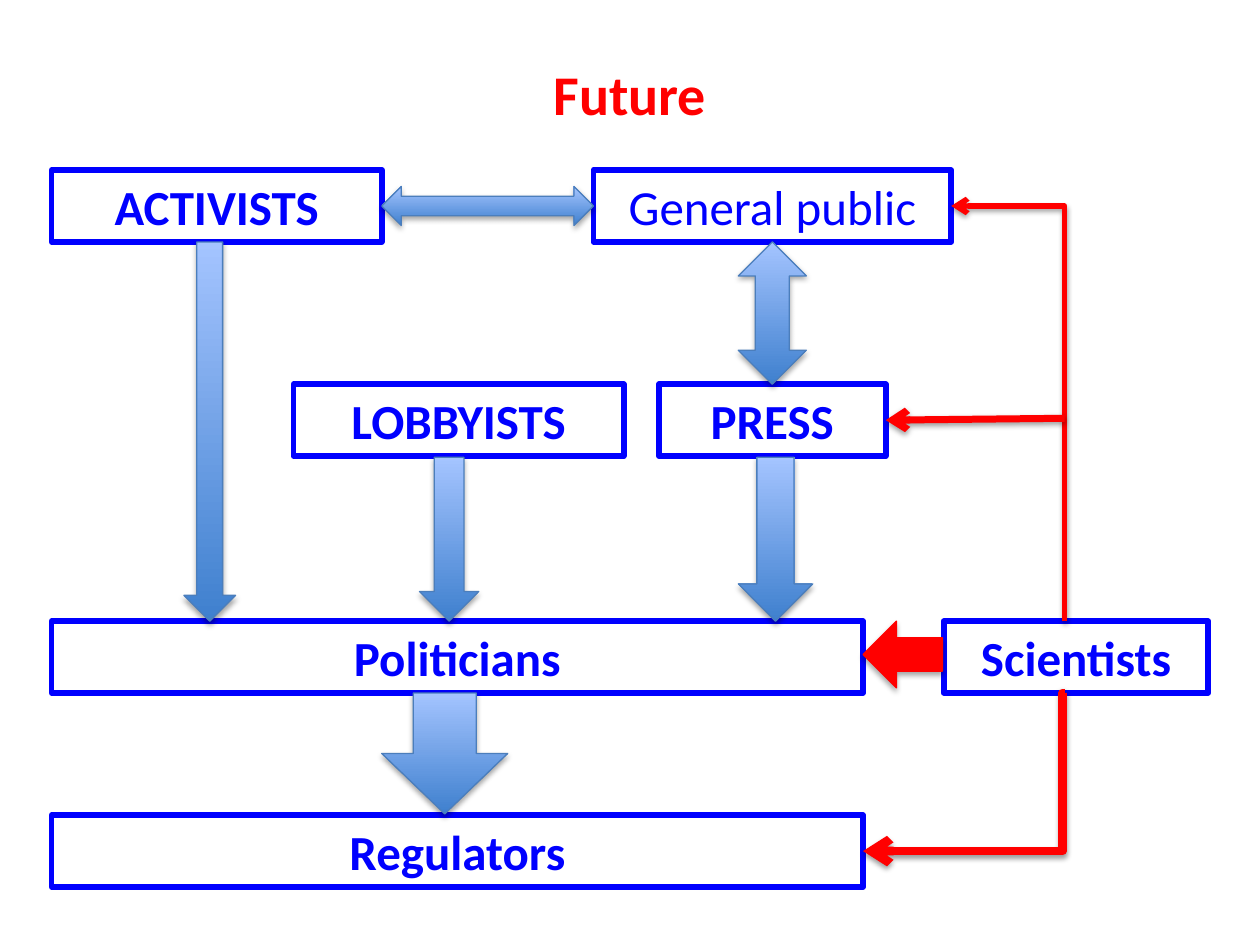
"""Build the "Future" slide: a flow of influence from scientists and others to regulators."""
import pptx
import pptx.dml.color
import pptx.enum.shapes
import pptx.enum.text
import pptx.oxml
import pptx.oxml.ns
import pptx.util

PX = 9144
BLUE = pptx.dml.color.RGBColor(0x00, 0x00, 0xFF)
RED = pptx.dml.color.RGBColor(0xFF, 0x00, 0x00)
ARROW_DARK = pptx.dml.color.RGBColor(0x3F, 0x80, 0xCE)
ARROW_LIGHT = pptx.dml.color.RGBColor(0xA4, 0xC4, 0xFF)
ARROW_EDGE = pptx.dml.color.RGBColor(0x4B, 0x7E, 0xBC)
KIND = pptx.enum.shapes.MSO_SHAPE
LINE = pptx.enum.shapes.MSO_CONNECTOR
NS = pptx.oxml.ns.nsdecls("a")


def add_label(shapes, text, box, size, color, bold):
    shape = shapes.add_textbox(*[value * PX for value in box])
    frame = shape.text_frame
    frame.word_wrap = True
    frame.auto_size = pptx.enum.text.MSO_AUTO_SIZE.SHAPE_TO_FIT_TEXT
    paragraph = frame.paragraphs[0]
    paragraph.alignment = pptx.enum.text.PP_ALIGN.CENTER
    run = paragraph.add_run()
    run.text = text
    run.font.name = "Calibri"
    run.font.size = pptx.util.Pt(size)
    run.font.bold = bold
    run.font.color.rgb = color
    return shape


def add_shadow(shape, distance, opacity):
    shape.element.spPr.append(pptx.oxml.parse_xml(
        f'<a:effectLst {NS}><a:outerShdw blurRad="40000" dist="{distance}" dir="5400000" '
        f'rotWithShape="0"><a:srgbClr val="000000"><a:alpha val="{opacity}"/></a:srgbClr>'
        '</a:outerShdw></a:effectLst>'))


presentation = pptx.Presentation()
presentation.slide_width = 1000 * PX
presentation.slide_height = 750 * PX
slide = presentation.slides.add_slide(presentation.slide_layouts[6])
shapes = slide.shapes

boxes = {}
for name, left, top, width in [
    ("Regulators", 41, 647, 644),
    ("Scientists", 749, 493, 210),
    ("Politicians", 41, 493, 644),
    ("LOBBYISTS", 233, 305, 262),
    ("ACTIVISTS", 41, 135, 262),
    ("General public", 471, 135, 284),
    ("PRESS", 523, 305, 180),
]:
    box = add_label(shapes, name, (left, top, width, 57), 28, BLUE, name != "General public")
    box.line.color.rgb = BLUE
    box.line.width = pptx.util.Pt(3.25)
    boxes[name] = box

for kind, left, top, width, height in [
    (KIND.LEFT_RIGHT_ARROW, 303, 148, 168, 31),
    (KIND.DOWN_ARROW, 333, 363, 47, 130),
    (KIND.DOWN_ARROW, 146, 192, 41, 301),
    (KIND.UP_DOWN_ARROW, 586, 192, 54, 113),
    (KIND.DOWN_ARROW, 586, 363, 59, 130),
    (KIND.DOWN_ARROW, 303, 550, 100, 96),
    (KIND.LEFT_ARROW, 685, 493, 63, 53),
]:
    arrow = shapes.add_shape(kind, left * PX, top * PX, width * PX, height * PX)
    if kind == KIND.LEFT_ARROW:
        arrow.fill.solid()
        arrow.fill.fore_color.rgb = RED
        arrow.line.color.rgb = RED
    else:
        arrow.fill.gradient()
        arrow.fill.gradient_angle = 90
        for stop, color in zip(arrow.fill.gradient_stops, (ARROW_DARK, ARROW_LIGHT)):
            stop.color.rgb = color
        arrow.line.color.rgb = ARROW_EDGE
    arrow.line.width = pptx.util.Pt(0.75)
    add_shadow(arrow, 23000, 35000)

for kind, start_y, target, end_x, end_y, weight, bend in [
    (LINE.ELBOW, 550, "Regulators", 685, 675, 5, 1100),
    (LINE.ELBOW, 493, "General public", 755, 163, 3, 0),
    (LINE.STRAIGHT, 332, "PRESS", 703, 334, 4, None),
]:
    connector = shapes.add_connector(kind, 845 * PX, start_y * PX, end_x * PX, end_y * PX)
    connector.end_connect(boxes[target], 3)
    connector.line.color.rgb = RED
    connector.line.width = pptx.util.Pt(weight)
    properties = connector.element.spPr
    properties.find(pptx.oxml.ns.qn("a:ln")).append(
        pptx.oxml.parse_xml(f'<a:tailEnd {NS} type="arrow"/>'))
    if bend is not None:
        properties.find(".//" + pptx.oxml.ns.qn("a:avLst")).append(
            pptx.oxml.parse_xml(f'<a:gd {NS} name="adj1" fmla="val {bend}"/>'))
    add_shadow(connector, 20000, 38000)

add_label(shapes, "Future", (260, 42, 480, 64), 32, RED, True)

presentation.save("out.pptx")
